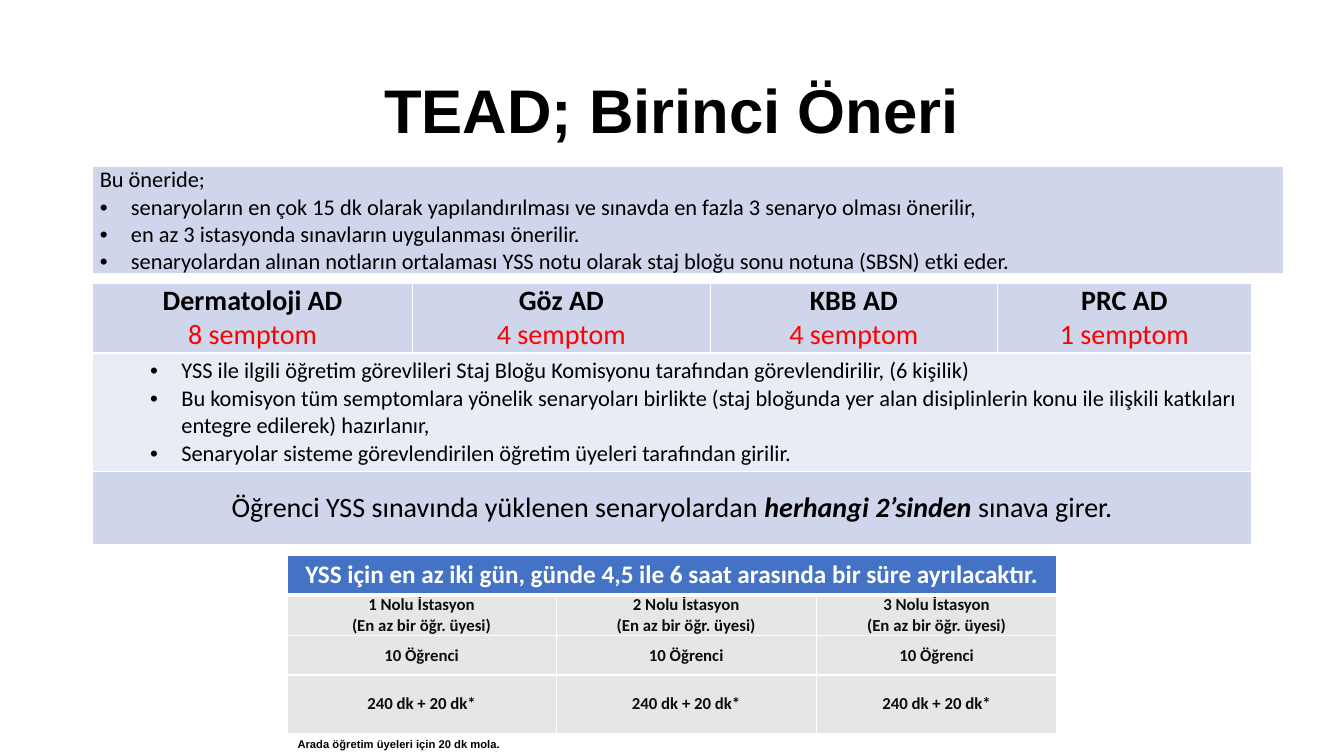
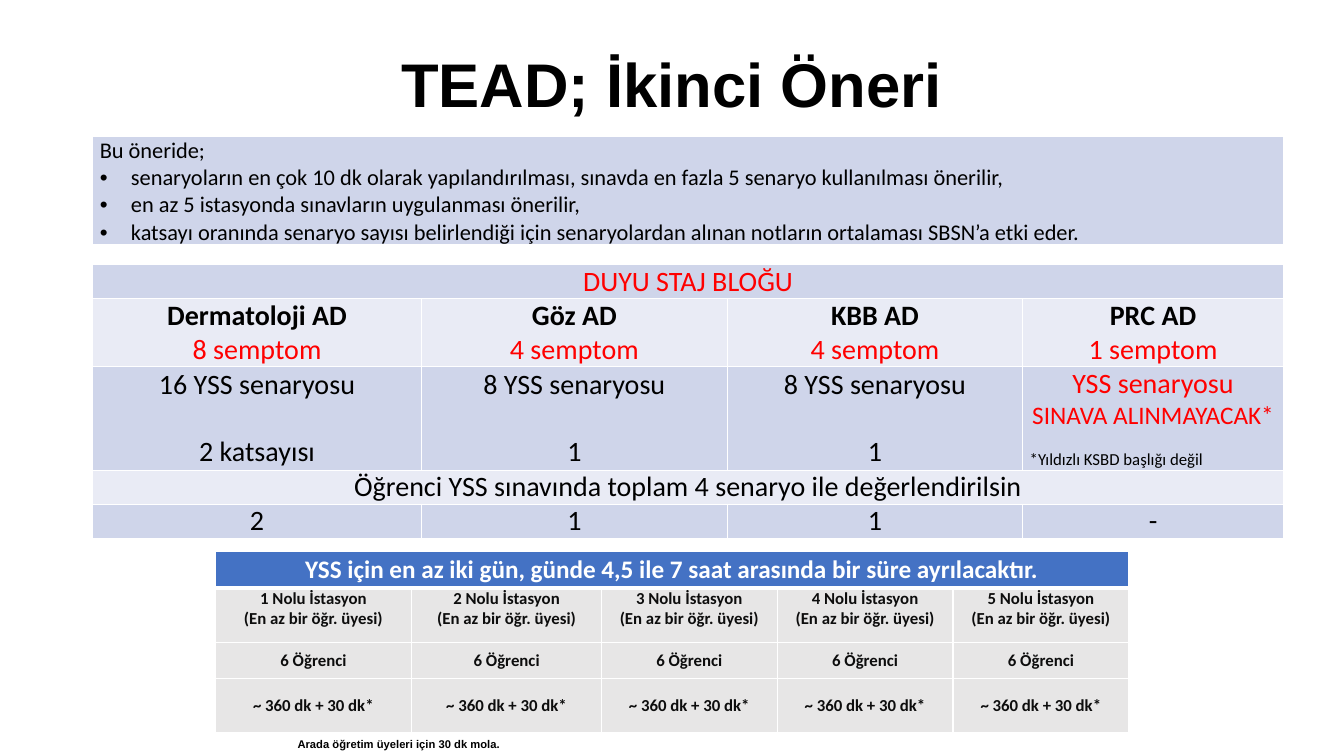
from dataclasses import dataclass

from lxml.etree import SubElement
from pptx import Presentation
from pptx.dml.color import RGBColor
from pptx.enum.text import MSO_ANCHOR, PP_ALIGN
from pptx.oxml.ns import qn
from pptx.util import Inches, Pt

SLIDE_WIDTH, SLIDE_HEIGHT = Inches(13.33), Inches(7.5)

BLACK = RGBColor(0x00, 0x00, 0x00)
WHITE = RGBColor(0xFF, 0xFF, 0xFF)
RED = RGBColor(0xFF, 0x00, 0x00)
BLUE = RGBColor(0x44, 0x72, 0xC4)
BAND_DARK = RGBColor(0xCF, 0xD5, 0xEA)
BAND_LIGHT = RGBColor(0xE9, 0xEB, 0xF5)
STATION_GREY = RGBColor(0xE7, 0xE6, 0xE6)
STATION_TEXT = RGBColor(0x0D, 0x0D, 0x0D)

LEFT_MARGIN = 6.9
CONTENT_WIDTH = 86.2
WIDE_WIDTH = 88.6
DEPARTMENT_SHARES = (27.6, 25.7, 24.8, 21.9)
DEPARTMENTS = (("Dermatoloji AD", "8 semptom"), ("Göz AD", "4 semptom"),
               ("KBB AD", "4 semptom"), ("PRC AD", "1 semptom"))


@dataclass
class Row:
    """A table row; a single cell spans all columns."""
    height: float
    fill: RGBColor
    cells: list
    anchor: MSO_ANCHOR = MSO_ANCHOR.MIDDLE
    line_above: float = 1
    line_below: float = 1


def across(columns):
    """Width of a number of the slide's 100 grid columns."""
    return round(SLIDE_WIDTH * columns / 100)


def down(rows):
    """Height of a number of the slide's 100 grid rows."""
    return round(SLIDE_HEIGHT * rows / 100)


def line(text, **text_format):
    return text, text_format


def add_bullet(paragraph, indent):
    properties = paragraph._p.get_or_add_pPr()
    properties.set("marL", str(Inches(indent)))
    properties.set("indent", str(-Inches(0.31)))
    SubElement(properties, qn("a:buFont"), typeface="Arial")
    SubElement(properties, qn("a:buChar"), char="•")


def write(frame, text, size=20, color=BLACK, bold=False, font="Calibri",
          align=PP_ALIGN.CENTER, space_before=0, line_spacing=None, bullet_indent=None):
    """Add a paragraph; text is a string or a list of (string, emphasised) pairs."""
    paragraph = frame.paragraphs[0] if not frame.text else frame.add_paragraph()
    paragraph.alignment = align
    paragraph.space_before = Pt(space_before)
    if line_spacing:
        paragraph.line_spacing = line_spacing
    if bullet_indent is not None:
        add_bullet(paragraph, bullet_indent)
    for part, emphasised in [(text, False)] if isinstance(text, str) else text:
        run = paragraph.add_run()
        run.text = part
        run.font.name = font
        run.font.size = Pt(size)
        run.font.bold = bold or emphasised
        run.font.italic = emphasised
        run.font.color.rgb = color


def add_text(slide, left, top, width, height, text, **text_format):
    shape = slide.shapes.add_textbox(across(left), down(top), across(width), down(height))
    frame = shape.text_frame
    frame.word_wrap = True
    frame.vertical_anchor = MSO_ANCHOR.MIDDLE
    write(frame, text, font="Arial", bold=True, **text_format)


def add_title(slide, top, height, text):
    add_text(slide, LEFT_MARGIN, top, CONTENT_WIDTH, height, text, size=44, line_spacing=0.9)


def add_footnote(slide, text):
    add_text(slide, 21.4, 96.8, 20, 3.2, text, size=8, align=PP_ALIGN.LEFT)


def style_cell(cell, row):
    borders = {"a:lnL": 1, "a:lnR": 1, "a:lnT": row.line_above, "a:lnB": row.line_below}
    properties = cell._tc.get_or_add_tcPr()
    for tag, width in borders.items():
        border = SubElement(properties, qn(tag), w=str(Pt(width)))
        SubElement(SubElement(border, qn("a:solidFill")), qn("a:srgbClr"), val=str(WHITE))
    cell.fill.solid()
    cell.fill.fore_color.rgb = row.fill
    cell.margin_left = cell.margin_right = Inches(0.07)
    cell.margin_top = cell.margin_bottom = 0
    cell.vertical_anchor = row.anchor


def add_grid(slide, left, top, width, shares, rows):
    """Add a table whose column widths follow the shares."""
    height = sum(row.height for row in rows)
    table = slide.shapes.add_table(len(rows), len(shares), across(left), down(top),
                                   across(width), down(height)).table
    table.first_row = table.horz_banding = False
    for column, share in zip(table.columns, shares):
        column.width = across(width * share / sum(shares))
    for index, row in enumerate(rows):
        table.rows[index].height = down(row.height)
        cells = [table.cell(index, position) for position in range(len(shares))]
        for cell in cells:
            style_cell(cell, row)
        if len(row.cells) < len(cells):
            cells[0].merge(cells[-1])
        for cell, lines in zip(cells, row.cells):
            for text, text_format in lines:
                write(cell.text_frame, text, **text_format)


def bullets(texts, indent):
    return [line(text, size=16, align=PP_ALIGN.LEFT, bullet_indent=indent) for text in texts]


def add_intro(slide, top, texts):
    lines = [line("Bu öneride;", size=16, align=PP_ALIGN.LEFT)] + bullets(texts, 0.31)
    add_grid(slide, LEFT_MARGIN, top, WIDE_WIDTH, (1,),
             [Row(14.2, BAND_DARK, [lines], MSO_ANCHOR.TOP)])


def department_row(height, fill):
    return Row(height, fill, [[line(name, bold=True), line(symptoms, color=RED)]
                              for name, symptoms in DEPARTMENTS])


def add_stations(slide, top, width, shares, heights, heading, students, duration):
    """Add the centred station table, one column for each station."""
    def station_line(text):
        return line(text, size=12, color=STATION_TEXT, bold=True)

    count = len(shares)
    stations = [[station_line(f"{number} Nolu İstasyon"), station_line("(En az bir öğr. üyesi)")]
                for number in range(1, count + 1)]
    heading_line = line(heading, size=18, color=WHITE, bold=True)
    add_grid(slide, (100 - width) / 2, top, width, shares, [
        Row(heights[0], BLUE, [[heading_line]], line_below=3),
        Row(heights[1], STATION_GREY, stations, MSO_ANCHOR.TOP, line_above=3),
        Row(heights[2], STATION_GREY, [[station_line(students)]] * count),
        Row(heights[3], STATION_GREY, [[station_line(duration)]] * count),
    ])


def build_first_proposal(slide):
    add_title(slide, 5.3, 19.3, "TEAD; Birinci Öneri")
    commission = bullets([
        "YSS ile ilgili öğretim görevlileri Staj Bloğu Komisyonu tarafından görevlendirilir, (6 kişilik)",
        "Bu komisyon tüm semptomlara yönelik senaryoları birlikte (staj bloğunda yer alan "
        "disiplinlerin konu ile ilişkili katkıları entegre edilerek) hazırlanır,",
        "Senaryolar sisteme görevlendirilen öğretim üyeleri tarafından girilir.",
    ], 0.81)
    exam = [line([("Öğrenci YSS sınavında yüklenen senaryolardan ", False),
                  ("herhangi 2’sinden ", True), ("sınava girer.", False)])]
    add_grid(slide, LEFT_MARGIN, 37.5, CONTENT_WIDTH, DEPARTMENT_SHARES, [
        department_row(9.2, BAND_DARK),
        Row(15.7, BAND_LIGHT, [commission]),
        Row(9.7, BAND_DARK, [exam]),
    ])
    add_stations(slide, 73.4, 57.3, (35, 33.8, 31.3), (5.3, 5.4, 5.2, 7.7),
                 "YSS için en az iki gün, günde 4,5 ile 6 saat arasında bir süre ayrılacaktır.",
                 "10 Öğrenci", "240 dk + 20 dk*")
    add_footnote(slide, "Arada öğretim üyeleri için 20 dk mola.")
    add_intro(slide, 22, [
        "senaryoların en çok 15 dk olarak yapılandırılması ve sınavda en fazla 3 senaryo olması önerilir,",
        "en az 3 istasyonda sınavların uygulanması önerilir.",
        "senaryolardan alınan notların ortalaması YSS notu olarak staj bloğu sonu notuna (SBSN) etki eder.",
    ])


def build_second_proposal(slide):
    add_title(slide, 3.2, 16.8, "TEAD; İkinci Öneri")
    add_intro(slide, 18.1, [
        "senaryoların en çok 10 dk olarak yapılandırılması, sınavda en fazla 5 senaryo "
        "kullanılması önerilir,",
        "en az 5 istasyonda sınavların uygulanması önerilir,",
        "katsayı oranında senaryo sayısı belirlendiği için senaryolardan alınan notların "
        "ortalaması SBSN’a etki eder.",
    ])
    add_footnote(slide, "Arada öğretim üyeleri için 30 dk mola.")
    scenarios = [[line(f"{count} YSS senaryosu"), line(factor, space_before=24)]
                 for count, factor in ((16, "2 katsayısı"), (8, "1"), (8, "1"))]
    excluded = [
        line("YSS senaryosu", color=RED),
        line("SINAVA ALINMAYACAK*", size=18, color=RED),
        line("*Yıldızlı KSBD başlığı değil", size=12, align=PP_ALIGN.LEFT, space_before=13),
    ]
    add_grid(slide, LEFT_MARGIN, 35, WIDE_WIDTH, DEPARTMENT_SHARES, [
        Row(4.5, BAND_DARK, [[line("DUYU STAJ BLOĞU", color=RED)]]),
        department_row(9, BAND_LIGHT),
        Row(13.7, BAND_DARK, scenarios + [excluded]),
        Row(4.5, BAND_LIGHT,
            [[line("Öğrenci YSS sınavında toplam 4 senaryo ile değerlendirilsin")]]),
        Row(4.5, BAND_DARK, [[line(value)] for value in ("2", "1", "1", "-")]),
    ])
    add_stations(slide, 73, 68, (21.5, 20.7, 19.2, 19.2, 19.2), (4.8, 7.2, 4.8, 7.1),
                 "YSS için en az iki gün, günde 4,5 ile 7 saat arasında bir süre ayrılacaktır.",
                 "6 Öğrenci", "~ 360 dk + 30 dk*")


def main():
    presentation = Presentation()
    presentation.slide_width, presentation.slide_height = SLIDE_WIDTH, SLIDE_HEIGHT
    blank_layout = presentation.slide_layouts[6]
    for build in (build_first_proposal, build_second_proposal):
        build(presentation.slides.add_slide(blank_layout))
    presentation.save("out.pptx")


if __name__ == "__main__":
    main()
